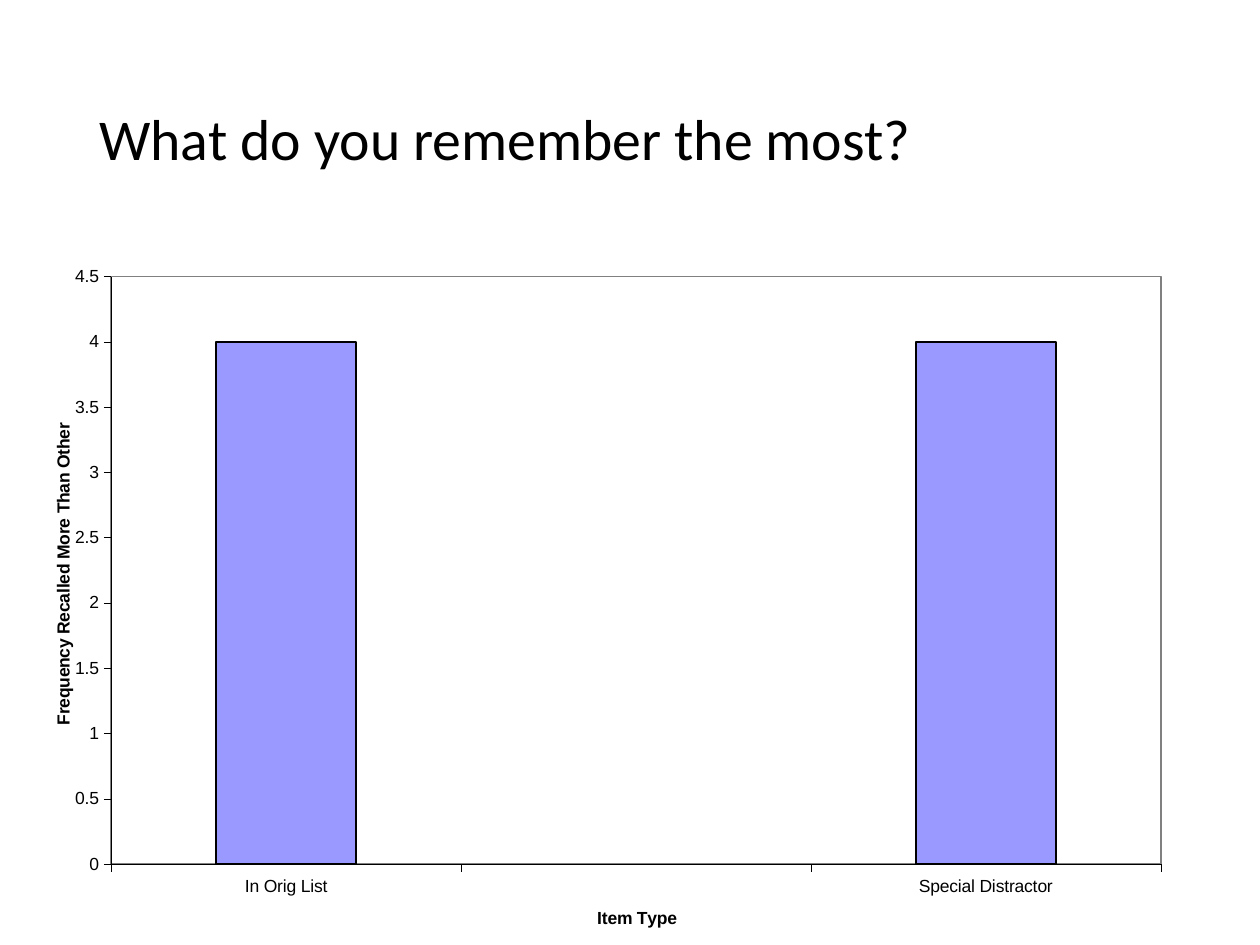
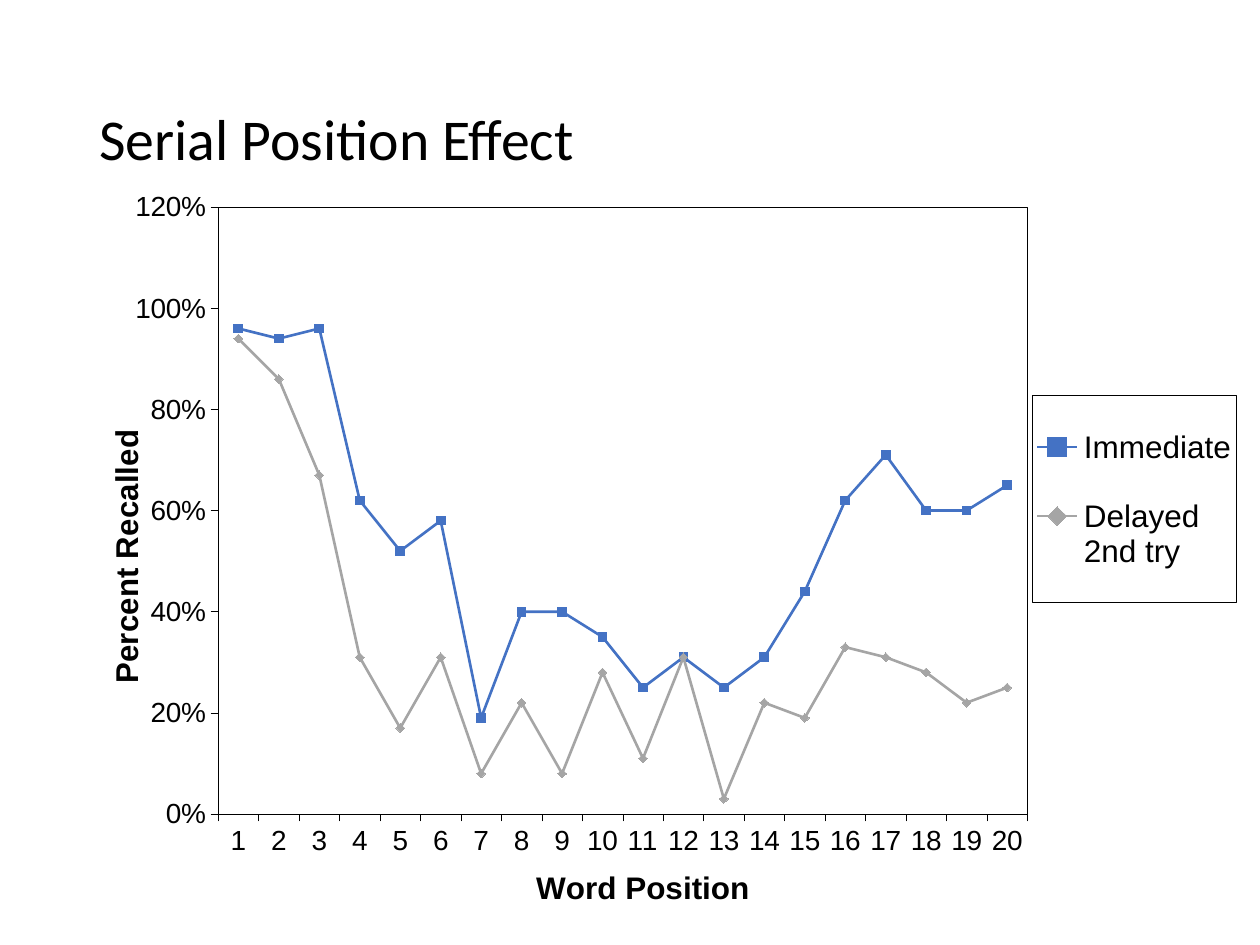
from pptx import Presentation
from pptx.chart.data import CategoryChartData
from pptx.dml.color import RGBColor
from pptx.enum.chart import XL_CHART_TYPE, XL_LEGEND_POSITION, XL_MARKER_STYLE, XL_TICK_MARK
from pptx.enum.text import MSO_ANCHOR
from pptx.oxml import parse_xml
from pptx.oxml.ns import nsdecls, qn
from pptx.util import Pt

BLACK = "000000"
TITLE_FONT, CHART_FONT = "Calibri", "Arial"
color = RGBColor.from_string


def write_text(text_frame, text, size=10, font=CHART_FONT, bold=False, spacing=None):
    paragraph = text_frame.paragraphs[0]
    paragraph.line_spacing = spacing
    run = paragraph.add_run()
    run.text = text
    run.font.size, run.font.name, run.font.bold = Pt(size), font, bold
    run.font.color.rgb = color(BLACK)


def place(element, *percents, inner=False):
    """Place a chart part: x, y and maybe width, height, in percent of the chart."""
    for layout in element.findall(qn("c:layout")):
        element.remove(layout)
    target = '<c:layoutTarget val="inner"/>' if inner else ""
    measures = "".join(f'<c:{tag} val="{percent / 100:.4f}"/>'
                       for tag, percent in zip("xywh", percents))
    layout = parse_xml(
        f'<c:layout {nsdecls("c")}><c:manualLayout>{target}<c:xMode val="edge"/>'
        f'<c:yMode val="edge"/>{measures}</c:manualLayout></c:layout>')
    overlay = element.find(qn("c:overlay"))
    if overlay is None:
        element.insert(0, layout)
    else:
        overlay.addprevious(layout)


# What each slide holds
slides = [
    dict(
        title="What do you remember the most?",
        kind=XL_CHART_TYPE.COLUMN_CLUSTERED, box=(20, 105, 650.5, 435),
        categories=["In Orig List", "", "Special Distractor"],
        series=[("Series 1", [4, None, 4], "9999FF", None)],
        category_title="Item Type", category_title_at=(49.1, 94.5),
        value_title="Frequency Recalled More Than Other", value_title_at=(1.2, 31),
        title_size=10, label_size=10, number_format="General", maximum=4.5, step=0.5,
        plot=(6.7, 12.2, 92.2, 77.2), frame=("808080", 1), legend=None),
    dict(
        title="Serial Position Effect",
        kind=XL_CHART_TYPE.LINE_MARKERS, box=(49.7, 96, 663.5, 427),
        categories=[str(position) for position in range(1, 21)],
        series=[
            ("Immediate",
             [0.96, 0.94, 0.96, 0.62, 0.52, 0.58, 0.19, 0.4, 0.4, 0.35,
              0.25, 0.31, 0.25, 0.31, 0.44, 0.62, 0.71, 0.6, 0.6, 0.65],
             "4472C4", XL_MARKER_STYLE.SQUARE),
            ("Delayed 2nd try",
             [0.94, 0.86, 0.67, 0.31, 0.17, 0.31, 0.08, 0.22, 0.08, 0.28,
              0.11, 0.31, 0.03, 0.22, 0.19, 0.33, 0.31, 0.28, 0.22, 0.25],
             "A5A5A5", XL_MARKER_STYLE.DIAMOND)],
        category_title="Word Position", category_title_at=(38.2, 93.8),
        value_title="Percent Recalled", value_title_at=(1.1, 35),
        title_size=18, label_size=16, number_format="0%", maximum=1.2, step=0.2,
        plot=(11.3, 5.3, 69.7, 82.1), frame=(BLACK, 0.25),
        legend=(81.4, 30.8, 17.6, 28)),
]

presentation = Presentation()
presentation.slide_width, presentation.slide_height = Pt(720), Pt(540)

for content in slides:
    slide = presentation.slides.add_slide(presentation.slide_layouts[6])

    # Title
    title = slide.shapes.add_textbox(Pt(49.7), Pt(28.75), Pt(621), Pt(104.4))
    title.text_frame.word_wrap = True
    title.text_frame.vertical_anchor = MSO_ANCHOR.MIDDLE
    write_text(title.text_frame, content["title"], size=33, font=TITLE_FONT, spacing=0.9)

    # Chart data
    data = CategoryChartData(number_format=content["number_format"])
    data.categories = content["categories"]
    for name, values, _, _ in content["series"]:
        data.add_series(name, values)
    box = [Pt(length) for length in content["box"]]
    chart = slide.shapes.add_chart(content["kind"], *box, data).chart
    chart.has_title = False
    chart.font.size, chart.font.name = Pt(10), CHART_FONT
    chart.font.color.rgb = color(BLACK)

    # Series
    plot = chart.plots[0]
    plot.vary_by_categories = False
    for series, (_, _, hue, marker) in zip(plot.series, content["series"]):
        if marker is None:
            plot.gap_width = 150
            series.format.fill.solid()
            series.format.fill.fore_color.rgb = color(hue)
            series.format.line.color.rgb = color(BLACK)
            series.format.line.width = Pt(1)
        else:
            series.smooth = False
            series.format.line.color.rgb = color(hue)
            series.format.line.width = Pt(1.5)
            series.marker.style, series.marker.size = marker, 5
            series.marker.format.fill.solid()
            series.marker.format.fill.fore_color.rgb = color(hue)
            series.marker.format.line.color.rgb = color(hue)

    # Axes and their titles
    for axis, name in ((chart.category_axis, "category"), (chart.value_axis, "value")):
        axis.has_major_gridlines = False
        axis.major_tick_mark = XL_TICK_MARK.OUTSIDE
        axis.minor_tick_mark = XL_TICK_MARK.NONE
        axis.format.line.color.rgb = color(BLACK)
        axis.format.line.width = Pt(0.25)
        labels = axis.tick_labels.font
        labels.size, labels.name = Pt(content["label_size"]), CHART_FONT
        labels.color.rgb = color(BLACK)
        write_text(axis.axis_title.text_frame, content[f"{name}_title"],
                   size=content["title_size"], bold=True)
        place(axis.axis_title._element, *content[f"{name}_title_at"])
    body = chart.value_axis.axis_title._element.find(".//" + qn("a:bodyPr"))
    body.set("rot", "-5400000")
    body.set("vert", "horz")
    chart.value_axis.minimum_scale = 0
    chart.value_axis.maximum_scale = content["maximum"]
    chart.value_axis.major_unit = content["step"]
    chart.value_axis.tick_labels.number_format = content["number_format"]
    chart.value_axis.tick_labels.number_format_is_linked = False

    # Plot area and legend, each with a thin frame
    hue, width = content["frame"]
    frame_xml = (
        f'<c:spPr {nsdecls("c", "a")}><a:noFill/><a:ln w="{Pt(width)}"><a:solidFill>'
        f'<a:srgbClr val="{hue}"/></a:solidFill></a:ln></c:spPr>')
    plot_area = chart._chartSpace.find(".//" + qn("c:plotArea"))
    place(plot_area, *content["plot"], inner=True)
    plot_area.append(parse_xml(frame_xml))
    chart.has_legend = content["legend"] is not None
    if chart.has_legend:
        legend = chart.legend
        legend.position = XL_LEGEND_POSITION.RIGHT
        legend.include_in_layout = False
        legend.font.size, legend.font.name = Pt(18), CHART_FONT
        legend.font.color.rgb = color(BLACK)
        place(legend._element, *content["legend"])
        legend._element.find(qn("c:overlay")).addnext(parse_xml(frame_xml))

presentation.save("out.pptx")
